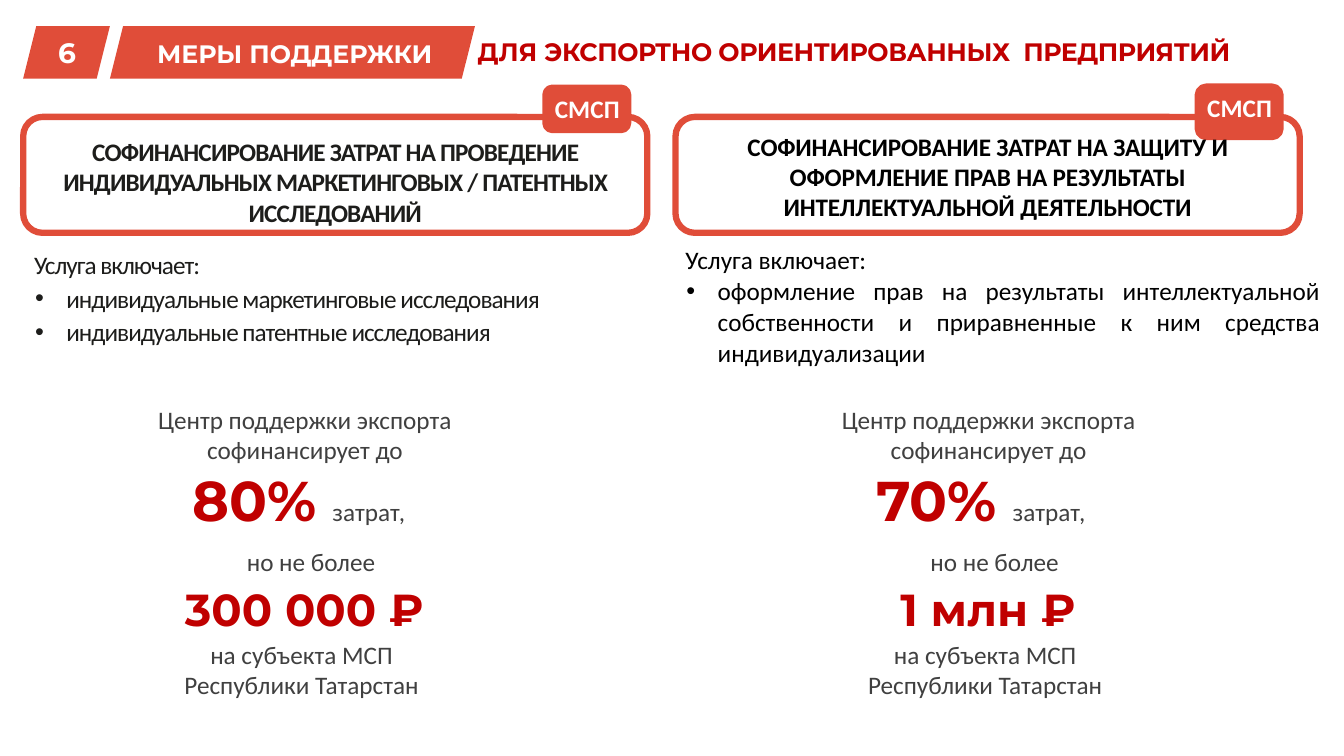
from lxml.etree import SubElement
from pptx import Presentation
from pptx.dml.color import RGBColor
from pptx.enum.shapes import MSO_SHAPE
from pptx.enum.text import MSO_ANCHOR, MSO_AUTO_SIZE, PP_ALIGN
from pptx.oxml.ns import qn
from pptx.util import Pt

PX = 9144  # 100 px to the inch
ORANGE, RED, WHITE, GREY, INK, BLACK = "E04D39", "C00000", "FFFFFF", "404040", "1D1D1B", "000000"
BODY = {"name": "Calibri", "size": Pt(18)}
DISPLAY = {"name": "Montserrat", "size": Pt(18), "bold": True}
SUPPORT_TEXT = {**BODY, "color": GREY}

PROGRAMMES = [
    {
        "left": 23, "badge": (85, 45),
        "title": "СОФИНАНСИРОВАНИЕ ЗАТРАТ НА ПРОВЕДЕНИЕ ИНДИВИДУАЛЬНЫХ МАРКЕТИНГОВЫХ / ПАТЕНТНЫХ ИССЛЕДОВАНИЙ",
        "title_top": 130, "title_style": {**BODY, "bold": True, "color": INK, "tracking": -60},
        "title_format": {"line_spacing": 1.01, "space_before": Pt(0.8)},
        "items": ["индивидуальные маркетинговые исследования", "индивидуальные патентные исследования"],
        "list_box": (23, 240, 619, 111), "list_style": {**BODY, "color": INK, "tracking": -70},
        "list_spacing": 1.08,
        "support_left": 131, "share": "80%", "limit": "300 000 ₽",
    },
    {
        "left": 670, "badge": (84, 53),
        "title": "СОФИНАНСИРОВАНИЕ ЗАТРАТ НА ЗАЩИТУ И ОФОРМЛЕНИЕ ПРАВ НА РЕЗУЛЬТАТЫ ИНТЕЛЛЕКТУАЛЬНОЙ ДЕЯТЕЛЬНОСТИ",
        "title_top": 125, "title_style": {**BODY, "bold": True, "color": BLACK, "tracking": -10},
        "title_format": {},
        "items": ["оформление прав на результаты интеллектуальной собственности "
                  "и приравненные к ним средства индивидуализации"],
        "list_box": (669, 237, 650, 198), "list_style": {**BODY, "color": BLACK},
        "list_spacing": 1.01,
        "support_left": 809, "share": "70%", "limit": "1 млн ₽",
    },
]


def rgb(value):
    return RGBColor.from_string(value)


def set_attributes(target, values):
    for name, value in values.items():
        setattr(target, name, value)


def add_figure(slide, kind, box, fill=None, line=None, adjustment=None, alpha=None):
    shape = slide.shapes.add_shape(kind, *(length * PX for length in box))
    shape.shadow.inherit = False
    if adjustment is not None:
        shape.adjustments[0] = adjustment
    if fill:
        shape.fill.solid()
        shape.fill.fore_color.rgb = rgb(fill)
    else:
        shape.fill.background()
    if alpha is not None:
        color = shape.fill._xPr.find(f"{qn('a:solidFill')}/{qn('a:srgbClr')}")
        SubElement(color, qn("a:alpha"), val=str(alpha * 1000))
    if line:
        shape.line.color.rgb = rgb(line)
        shape.line.width = Pt(4.5)
    else:
        shape.line.fill.background()
    return shape


def add_run(paragraph, text, style):
    run = paragraph.add_run()
    run.text = text
    font = dict(style)
    run.font.color.rgb = rgb(font.pop("color"))
    tracking = font.pop("tracking", None)
    if tracking is not None:
        run.font._element.set("spc", str(tracking))
    set_attributes(run.font, font)


def fill_text(shape, paragraphs, wrap=True, **layout):
    """Write paragraphs, each a list of (text, style) runs."""
    frame = shape.text_frame
    set_attributes(frame, {"word_wrap": wrap, "vertical_anchor": MSO_ANCHOR.TOP,
                           "auto_size": MSO_AUTO_SIZE.SHAPE_TO_FIT_TEXT})
    for index, runs in enumerate(paragraphs):
        paragraph = frame.add_paragraph() if index else frame.paragraphs[0]
        set_attributes(paragraph, {"alignment": PP_ALIGN.CENTER, **layout})
        for text, style in runs:
            add_run(paragraph, text, style)
    return frame.paragraphs


def add_text(slide, box, paragraphs, **layout):
    shape = slide.shapes.add_textbox(*(length * PX for length in box))
    return fill_text(shape, paragraphs, **layout)


def set_indent(paragraph, margin, indent, bullet=None):
    properties = paragraph._p.get_or_add_pPr()
    properties.set("marL", str(margin * PX))
    properties.set("indent", str(indent * PX))
    if bullet:
        SubElement(properties, qn("a:buFont"), typeface="Arial")
        SubElement(properties, qn("a:buChar"), char=bullet)


def draw_header(slide, left, top):
    for offset, width in ((86, 362), (0, 86)):
        add_figure(slide, MSO_SHAPE.PARALLELOGRAM, (left + offset, top, width, 52), ORANGE, adjustment=0.25)
    white = {**DISPLAY, "color": WHITE}
    red = {**DISPLAY, "color": RED}
    add_text(slide, (left + 14, top + 4, 59, 111), [[("6", {**white, "size": Pt(20)})]])
    add_text(slide, (left + 123, top + 7, 312, 40), [[("МЕРЫ ПОДДЕРЖКИ", white)]],
             wrap=False, alignment=PP_ALIGN.LEFT)
    add_text(slide, (left + 441, top + 5, 790, 40),
             [[("ДЛЯ ", red), ("ЭКСПОРТНО ОРИЕНТИРОВАННЫХ  ПРЕДПРИЯТИЙ", {**red, "tracking": -30})]],
             wrap=False, alignment=PP_ALIGN.LEFT)


def draw_badge(slide, left, top, height):
    kind = MSO_SHAPE.FLOWCHART_ALTERNATE_PROCESS
    add_figure(slide, kind, (left + 3, top + 2, 82, height - 3), ORANGE, ORANGE)
    label = add_figure(slide, kind, (left, top, 89, height))
    set_attributes(label.text_frame, {"margin_left": 2 * PX, "margin_right": 2 * PX})
    fill_text(label, [[("СМСП", {**BODY, "bold": True, "color": WHITE, "tracking": 10})]], wrap=False)


def draw_title_card(slide, programme, top=116, width=619):
    left = programme["left"]
    add_figure(slide, MSO_SHAPE.ROUNDED_RECTANGLE, (left, top, width, 115), line=ORANGE, adjustment=0.167)
    draw_badge(slide, left + 515, *programme["badge"])
    add_text(slide, (left, programme["title_top"], width, 101),
             [[(programme["title"], programme["title_style"])]], **programme["title_format"])


def draw_service_list(slide, programme):
    lines = ["Услуга включает:", *programme["items"]]
    heading, *items = add_text(
        slide, programme["list_box"], [[(line, programme["list_style"])] for line in lines],
        alignment=PP_ALIGN.JUSTIFY, line_spacing=programme["list_spacing"], space_before=Pt(0.8))
    set_indent(heading, 1, 0)
    for item in items:
        set_indent(item, 33, -31, "•")


def draw_support(slide, left, top, share, limit):
    figure = {**DISPLAY, "color": RED}
    add_figure(slide, MSO_SHAPE.ROUNDED_RECTANGLE, (left + 24, top, 296, 325), WHITE, alpha=46)
    add_text(slide, (left, top + 17, 343, 71),
             [[("Центр поддержки экспорта софинансирует до", SUPPORT_TEXT)]])
    share_box = add_figure(slide, MSO_SHAPE.FLOWCHART_ALTERNATE_PROCESS, (left + 46, top + 74, 251, 86))
    fill_text(share_box, [[(share + " ", {**figure, "size": Pt(40)}), ("затрат,", SUPPORT_TEXT)]],
              wrap=False, alignment=PP_ALIGN.LEFT)
    add_text(slide, (left + 104, top + 158, 150, 40), [[("но не более", SUPPORT_TEXT)]],
             wrap=False, alignment=PP_ALIGN.LEFT)
    add_text(slide, (left, top + 193, 342, 64), [[(limit, {**figure, "size": Pt(32)})]])
    add_text(slide, (left - 2, top + 250, 346, 71),
             [[(line, SUPPORT_TEXT)] for line in ("на субъекта МСП ", "Республики Татарстан ")])


def main():
    presentation = Presentation()
    presentation.slide_width, presentation.slide_height = 1333 * PX, 750 * PX
    slide = presentation.slides.add_slide(presentation.slide_layouts[6])
    draw_header(slide, 23, 26)
    for programme in PROGRAMMES:
        draw_title_card(slide, programme)
        draw_service_list(slide, programme)
        draw_support(slide, programme["support_left"], 379, programme["share"], programme["limit"])
    presentation.save("out.pptx")


if __name__ == "__main__":
    main()
